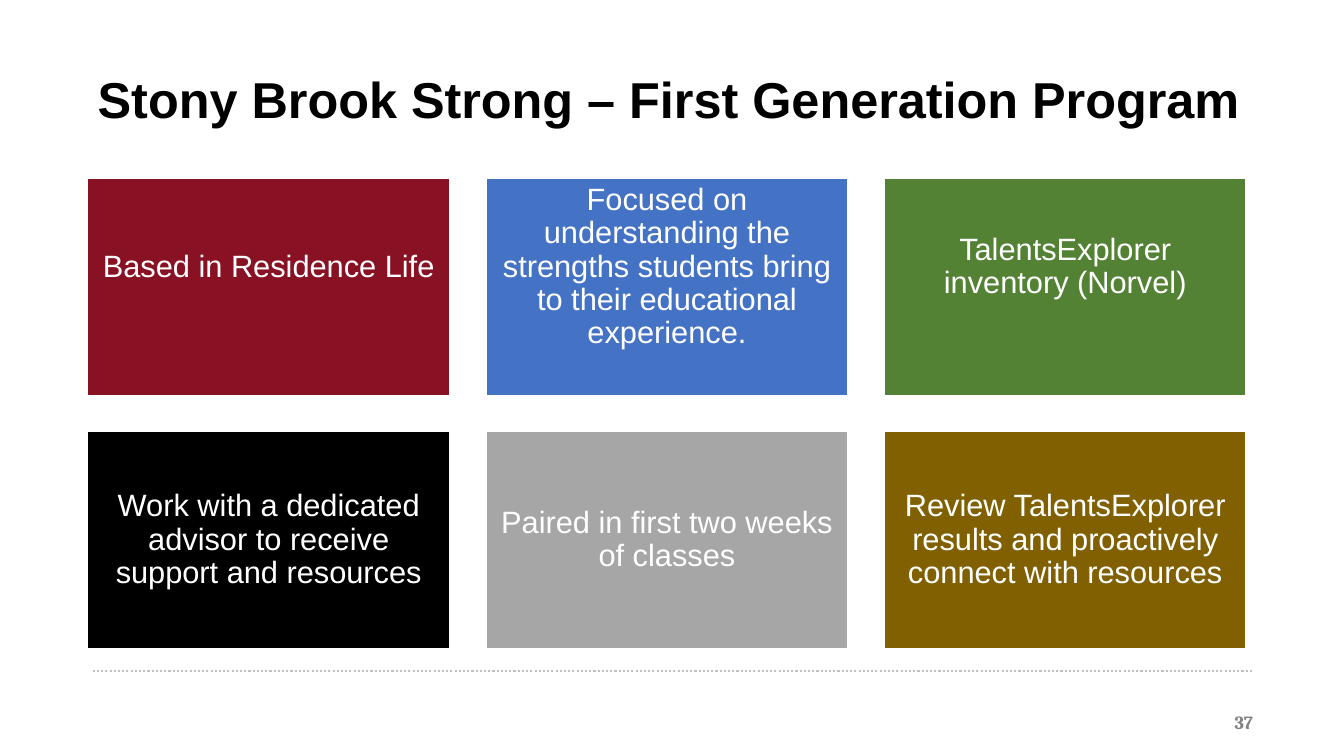
from lxml import etree
from pptx import Presentation
from pptx.dml.color import RGBColor
from pptx.enum.dml import MSO_LINE
from pptx.enum.shapes import MSO_CONNECTOR, MSO_SHAPE
from pptx.enum.text import MSO_ANCHOR, PP_ALIGN
from pptx.oxml.ns import qn
from pptx.util import Pt

PX = 9144  # 100 px to the inch
TOP, MIDDLE = MSO_ANCHOR.TOP, MSO_ANCHOR.MIDDLE
LEFT, CENTER, RIGHT = PP_ALIGN.LEFT, PP_ALIGN.CENTER, PP_ALIGN.RIGHT
RECTANGLE = MSO_SHAPE.RECTANGLE
STRAIGHT = MSO_CONNECTOR.STRAIGHT
DOTTED = MSO_LINE.ROUND_DOT

COLORS = {
    "white": "FFFFFF", "black": "000000", "rule": "C0C0C0", "number": "828383",
    "red": "881124", "blue": "4472C4", "green": "548235",
    "gray": "A6A6A6", "brown": "806000",
}

CARDS = [
    ("red", "Based in Residence Life"),
    ("blue", "Focused on understanding the strengths students bring "
             "to their educational experience."),
    ("green", "TalentsExplorer inventory (Norvel)"),
    ("black", "Work with a dedicated advisor to receive support and resources"),
    ("gray", "Paired in first two weeks of classes"),
    ("brown", "Review TalentsExplorer results and proactively connect with resources"),
]
COLUMNS = 3
CARD_LEFT, CARD_TOP = 87, 177
CARD_WIDTH, CARD_HEIGHT = 359, 216
COLUMN_STEP, ROW_STEP = 395, 251
# Left, top, right and bottom; the first row's text sits above the middle.
ROW_INSETS = [(9, 0, 9, 40), (9, 9, 9, 9)]

TITLE_FORMAT = {"name": "Arial", "size": Pt(36), "bold": True}
CARD_FORMAT = {"name": "Arial", "size": Pt(22), "bold": False}
NUMBER_FORMAT = {"name": "Cambria", "size": Pt(13.3), "bold": True}


def color(name):
    return RGBColor.from_string(COLORS[name])


def scaled(*lengths):
    return [length * PX for length in lengths]


def write_text(shape, text, font_format, color_name, alignment, anchor, insets, spacing):
    frame = shape.text_frame
    frame.word_wrap = True
    frame.vertical_anchor = anchor
    for side, inset in zip(("left", "top", "right", "bottom"), scaled(*insets)):
        setattr(frame, f"margin_{side}", inset)
    paragraph = frame.paragraphs[0]
    paragraph.alignment = alignment
    paragraph.line_spacing = spacing
    run = paragraph.add_run()
    run.text = text
    for attribute, value in font_format.items():
        setattr(run.font, attribute, value)
    run.font.color.rgb = color(color_name)


def add_label(slide, box, *text_settings):
    write_text(slide.shapes.add_textbox(*scaled(*box)), *text_settings)


def add_card(slide, index, fill_name, text):
    row, column = divmod(index, COLUMNS)
    shape = slide.shapes.add_shape(RECTANGLE, *scaled(
        CARD_LEFT + column * COLUMN_STEP, CARD_TOP + row * ROW_STEP,
        CARD_WIDTH, CARD_HEIGHT))
    shape.shadow.inherit = False
    shape.fill.solid()
    shape.fill.fore_color.rgb = color(fill_name)
    shape.line.color.rgb = color("white")
    shape.line.width = Pt(1)
    write_text(shape, text, CARD_FORMAT, "white", CENTER, MIDDLE, ROW_INSETS[row], 0.9)


def add_footer_rule(slide):
    rule = slide.shapes.add_connector(STRAIGHT, *scaled(92, 666, 1242, 666))
    rule.line.color.rgb = color("rule")
    rule.line.width = Pt(1.5)
    rule.line.dash_style = DOTTED
    etree.SubElement(rule._element.spPr, qn("a:effectLst"))


def main():
    presentation = Presentation()
    presentation.slide_width, presentation.slide_height = scaled(1333, 750)
    slide = presentation.slides.add_slide(presentation.slide_layouts[6])
    add_footer_rule(slide)
    add_label(slide, (956, 696, 300, 40), "37", NUMBER_FORMAT,
              "number", RIGHT, MIDDLE, (13, 7, 13, 7), 1.0)
    add_label(slide, (87, 74, 1165, 90), "Stony Brook Strong – First Generation Program",
              TITLE_FORMAT, "black", LEFT, TOP, (10, 5, 10, 5), 0.8)
    for index, (fill_name, text) in enumerate(CARDS):
        add_card(slide, index, fill_name, text)
    presentation.save("out.pptx")


if __name__ == "__main__":
    main()
